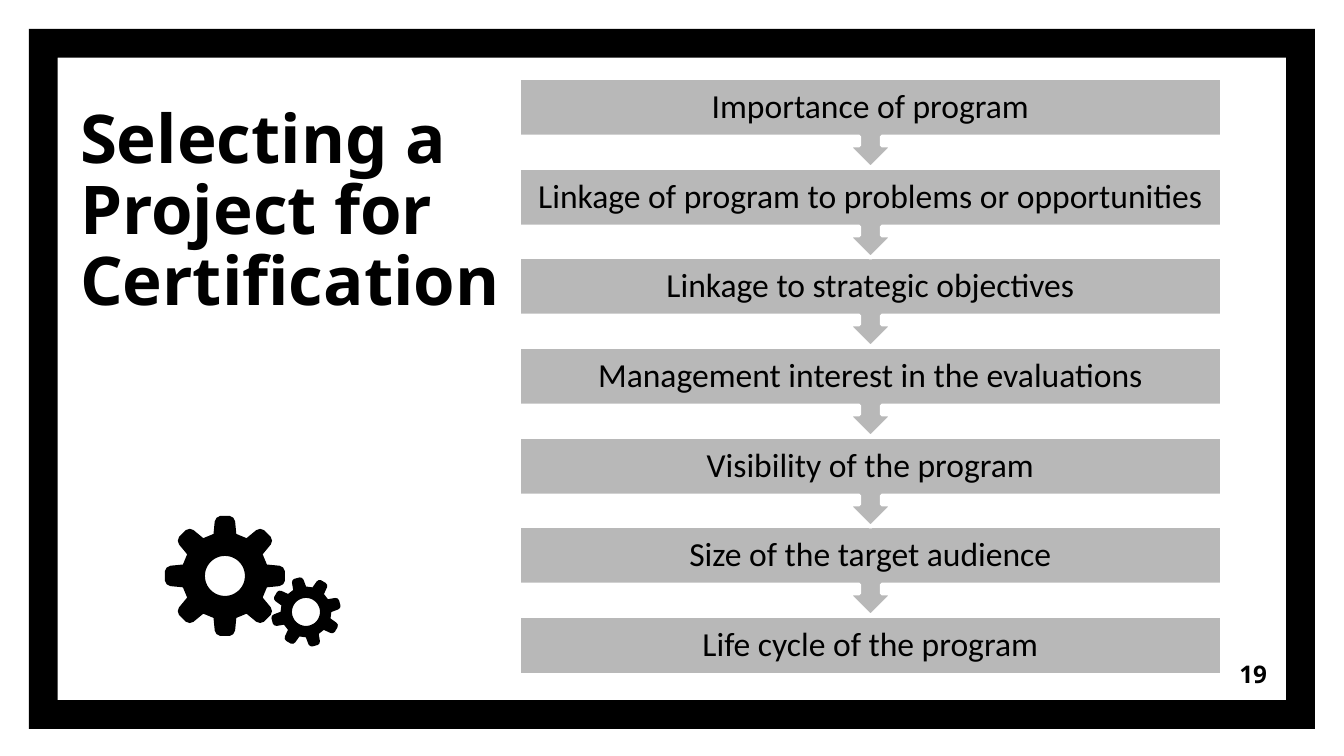
from dataclasses import dataclass
from math import cos, pi, radians, sin

from pptx import Presentation
from pptx.dml.color import RGBColor
from pptx.enum.shapes import MSO_SHAPE
from pptx.enum.text import MSO_ANCHOR, PP_ALIGN
from pptx.util import Pt

BLACK = RGBColor(0x00, 0x00, 0x00)
GREY = RGBColor(0xB8, 0xB8, 0xB8)
WHITE = RGBColor(0xFF, 0xFF, 0xFF)
HEADING_FONT = "Noto Sans"
BODY_FONT = "Calibri"
LEFT, CENTER, RIGHT = PP_ALIGN.LEFT, PP_ALIGN.CENTER, PP_ALIGN.RIGHT
MIDDLE, BOTTOM = MSO_ANCHOR.MIDDLE, MSO_ANCHOR.BOTTOM
FRAME, RECTANGLE = MSO_SHAPE.FRAME, MSO_SHAPE.RECTANGLE
CALLOUT = MSO_SHAPE.UP_ARROW_CALLOUT

EMU_PER_PX = 914400 / 134.4
TITLE = "Selecting a Project for Certification"
CRITERIA = [
    "Importance of program",
    "Linkage of program to problems or opportunities",
    "Linkage to strategic objectives",
    "Management interest in the evaluations",
    "Visibility of the program",
    "Size of the target audience",
    "Life cycle of the program",
]
FIRST_TOP, LAST_TOP = 78, 616
BAR_HEIGHT, CALLOUT_HEIGHT = 59, 90

# One upright tooth, as (across, outward) for a gear of radius 1
HALF_TOOTH = [(0.19, 0.70), (0.17, 0.91), (0.14, 0.97), (0.08, 1.0)]
TOOTH = [(-across, out) for across, out in HALF_TOOTH] + HALF_TOOTH[::-1]
TOOTH_COUNT = 8
HOLE_STEPS = 48


@dataclass(frozen=True)
class Box:
    left: int
    top: int
    width: int
    height: int

    def emu(self) -> list[int]:
        return [px(n) for n in (self.left, self.top, self.width, self.height)]


@dataclass(frozen=True)
class Gear:
    center_x: int
    center_y: int
    radius: int
    hole_radius: int
    turn: int


GEARS = [Gear(225, 576, 60, 20, 0), Gear(306, 612, 35, 14, -15)]


def px(length: float) -> int:
    return round(length * EMU_PER_PX)


def paint(shape, fill: RGBColor, line: RGBColor | None = None) -> None:
    shape.shadow.inherit = False
    shape.fill.solid()
    shape.fill.fore_color.rgb = fill
    if line is None:
        shape.line.fill.background()
    else:
        shape.line.color.rgb = line
        shape.line.width = Pt(2)


def write(shape, text: str, *, font: str, size: int, bold: bool = False,
          align=LEFT, anchor=MIDDLE, inset: int = 13,
          spacing: float = 0.9) -> None:
    frame = shape.text_frame
    frame.word_wrap = True
    frame.vertical_anchor = anchor
    frame.margin_left = frame.margin_right = px(inset)
    frame.margin_top = frame.margin_bottom = px(inset)
    paragraph = frame.paragraphs[0]
    paragraph.alignment = align
    paragraph.line_spacing = spacing
    run = paragraph.add_run()
    run.text = text
    run.font.name = font
    run.font.size = Pt(size)
    run.font.bold = bold
    run.font.color.rgb = BLACK


def add_criterion(slide, text: str, top: int, is_last: bool) -> None:
    height = BAR_HEIGHT if is_last else CALLOUT_HEIGHT
    bar = slide.shapes.add_shape(RECTANGLE if is_last else CALLOUT,
                                 *Box(519, top, 703, height).emu())
    bar.rotation = 0 if is_last else 180
    paint(bar, GREY, WHITE)
    # The label is separate, as a turned callout would turn its text
    label = slide.shapes.add_textbox(*Box(519, top, 703, BAR_HEIGHT).emu())
    write(label, text, font=BODY_FONT, size=18, align=CENTER, inset=17)


def add_gear(slide, gear: Gear) -> None:
    def place(across: float, out: float, angle: float) -> tuple[int, int]:
        x = gear.center_x + across * cos(angle) + out * sin(angle)
        y = gear.center_y + across * sin(angle) - out * cos(angle)
        return px(x), px(y)

    angles = [radians(gear.turn) + 2 * pi * n / TOOTH_COUNT
              for n in range(TOOTH_COUNT)]
    rim = [place(across * gear.radius, out * gear.radius, angle)
           for angle in angles for across, out in TOOTH]
    hole = [place(0, gear.hole_radius, -2 * pi * n / HOLE_STEPS)
            for n in range(HOLE_STEPS)]
    builder = slide.shapes.build_freeform(*rim[0])
    builder.add_line_segments(rim[1:], close=True)
    builder.move_to(*hole[0])
    builder.add_line_segments(hole[1:], close=True)
    paint(builder.convert_to_shape(), BLACK)


def main() -> None:
    presentation = Presentation()
    presentation.slide_width = px(1344)
    presentation.slide_height = px(756)
    slide = presentation.slides.add_slide(presentation.slide_layouts[5])

    # Border
    border = slide.shapes.add_shape(FRAME, *Box(29, 29, 1286, 700).emu())
    border.adjustments[0] = 0.041
    paint(border, BLACK)

    # Title and slide number
    title = slide.shapes.title
    title.left, title.top, title.width, title.height = Box(67, 144, 478, 189).emu()
    write(title, TITLE, font=HEADING_FONT, size=36, bold=True, anchor=BOTTOM,
          spacing=0.88)
    number = slide.shapes.add_textbox(*Box(1199, 645, 81, 58).emu())
    write(number, "19", font=HEADING_FONT, size=13, bold=True, align=RIGHT,
          spacing=1.0)

    # Gears
    for gear in GEARS:
        add_gear(slide, gear)

    # Criteria, drawn from the last so that each arrow overlaps the next bar
    last = len(CRITERIA) - 1
    pitch = (LAST_TOP - FIRST_TOP) / last
    for index in range(last, -1, -1):
        add_criterion(slide, CRITERIA[index], round(FIRST_TOP + index * pitch),
                      is_last=index == last)

    presentation.save("out.pptx")


if __name__ == "__main__":
    main()
